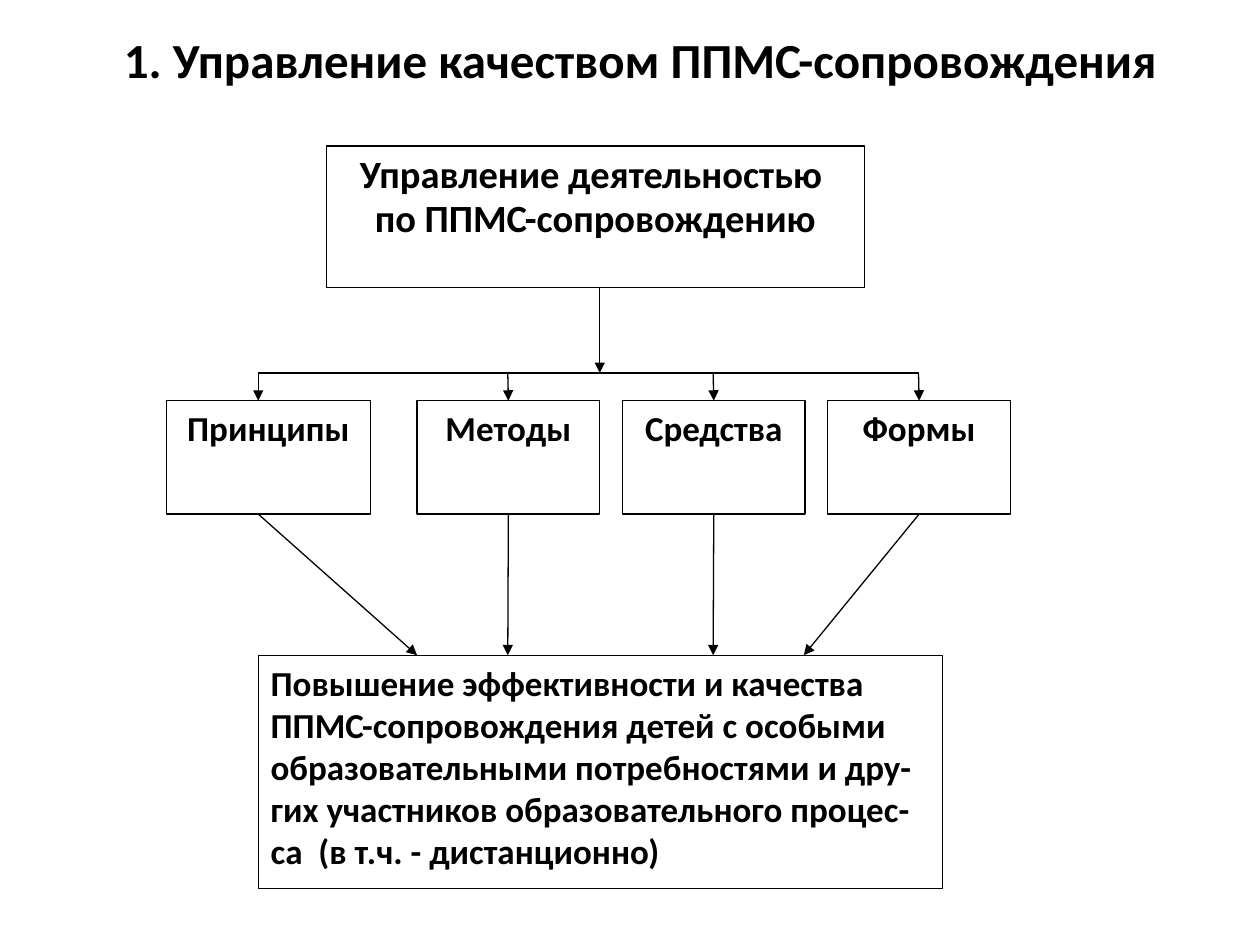
from pptx import Presentation
from pptx.dml.color import RGBColor
from pptx.enum.shapes import MSO_CONNECTOR as Connector, MSO_SHAPE as Shape
from pptx.enum.text import MSO_ANCHOR as Anchor, PP_ALIGN as Align
from pptx.oxml.ns import qn
from pptx.util import Inches, Pt
from lxml.etree import SubElement

COLORS = {"ink": "000000", "paper": "FFFFFF"}
INK = RGBColor.from_string(COLORS["ink"])
PAPER = RGBColor.from_string(COLORS["paper"])

deck = Presentation()
deck.slide_width, deck.slide_height = Inches(10), Inches(7.5)
page = deck.slides.add_slide(deck.slide_layouts[6])


def add_box(left, top, width, height, text, size, align=Align.CENTER, spacing=None, framed=True):
    place = [Inches(value) for value in (left, top, width, height)]
    if framed:
        box = page.shapes.add_shape(Shape.RECTANGLE, *place)
        box.shadow.inherit = False
        box.fill.solid()
        box.fill.fore_color.rgb = PAPER
        box.line.color.rgb = INK
        box.line.width = Pt(0.75)
    else:
        box = page.shapes.add_textbox(*place)
    frame = box.text_frame
    frame.word_wrap = True
    frame.vertical_anchor = Anchor.TOP if framed else Anchor.MIDDLE
    frame.text = text
    for para in frame.paragraphs:
        para.alignment = align
        if spacing:
            para.line_spacing = Pt(spacing)
        for span in para.runs:
            span.font.name = "Calibri"
            span.font.size = Pt(size)
            span.font.bold = True
            span.font.color.rgb = INK
    return box


def add_line(x1, y1, x2, y2, arrow=True):
    line = page.shapes.add_connector(
        Connector.STRAIGHT, Inches(x1), Inches(y1), Inches(x2), Inches(y2))
    line.line.color.rgb = INK
    line.line.width = Pt(0.75)
    if arrow:
        SubElement(line.line._get_or_add_ln(), qn("a:tailEnd"), type="triangle")
    SubElement(line._element.spPr, qn("a:effectLst"))
    return line


# Title
add_box(0.16, 0.29, 9.84, 0.47, "1. Управление качеством ППМС-сопровождения", 28,
        spacing=25, framed=False)

# Management box, its arrow and the distribution bar
BAR_Y, ROW_TOP, ROW_BOTTOM, RESULT_TOP = 2.96, 3.18, 4.08, 5.2
add_box(2.59, 1.16, 4.27, 1.12, "Управление деятельностью \nпо ППМС-сопровождению", 22,
        spacing=25)
add_line(4.76, 2.28, 4.76, BAR_Y)
add_line(2.05, BAR_Y, 7.29, BAR_Y, arrow=False)

# Result box
add_box(2.05, RESULT_TOP, 5.43, 1.85,
        "Повышение эффективности и качества ППМС-сопровождения детей с особыми "
        "образовательными потребностями и дру-гих участников образовательного процес-са  "
        "(в т.ч. - дистанционно)", 20, align=Align.LEFT)

# Four components: name, left, width, arrow x, x where the lower arrow lands
components = [
    ("Принципы", 1.32, 1.62, 2.05, 3.31),
    ("Методы", 3.31, 1.45, 4.03, 4.03),
    ("Средства", 4.94, 1.45, 5.66, 5.66),
    ("Формы", 6.57, 1.45, 7.29, 6.38),
]
for name, left, width, arrow_x, landing_x in components:
    box = add_box(left, ROW_TOP, width, ROW_BOTTOM - ROW_TOP, name, 20)
    upper = add_line(arrow_x, BAR_Y, arrow_x, ROW_TOP)
    lower = add_line(arrow_x, ROW_BOTTOM, landing_x, RESULT_TOP)
    # Join only the arrows that meet the middle of the box's side
    if abs(left + width / 2 - arrow_x) < 0.02:
        upper.end_connect(box, 0)
        lower.begin_connect(box, 2)

deck.save("out.pptx")
